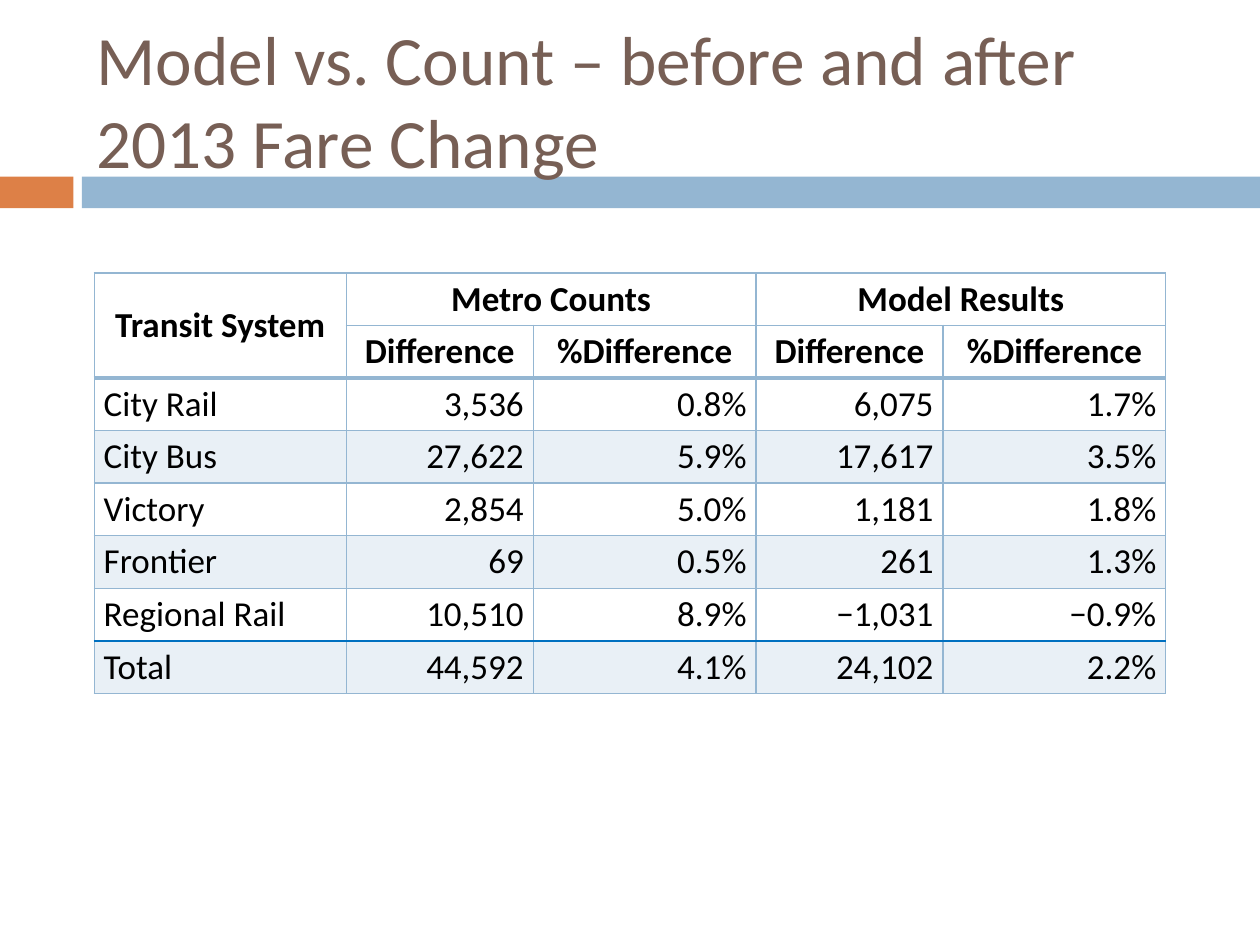
"""Build the slide that compares modelled and counted transit trips."""
from dataclasses import dataclass

import lxml.etree
import pptx
import pptx.dml.color
import pptx.enum.shapes
import pptx.enum.text
import pptx.oxml.ns
import pptx.util

Cm = pptx.util.Cm
Pt = pptx.util.Pt
ALIGN = pptx.enum.text.PP_ALIGN
MIDDLE = pptx.enum.text.MSO_ANCHOR.MIDDLE

HUES = {"orange": "DD8047", "blue": "94B6D2", "brown": "775F55",
        "black": "000000", "total": "0070C0"}
HEADS = 2
WIDTHS = (5.08, 3.77, 4.49, 3.77, 4.49)
HEIGHT = 1.06
ROWS = (
    ("Transit System", "Metro Counts", "", "Model Results", ""),
    ("", "Difference", "%Difference", "Difference", "%Difference"),
    ("City Rail", "3,536", "0.8%", "6,075", "1.7%"),
    ("City Bus", "27,622", "5.9%", "17,617", "3.5%"),
    ("Victory", "2,854", "5.0%", "1,181", "1.8%"),
    ("Frontier", "69", "0.5%", "261", "1.3%"),
    ("Regional Rail", "10,510", "8.9%", "−1,031", "−0.9%"),
    ("Total", "44,592", "4.1%", "24,102", "2.2%"),
)
MERGES = (((0, 0), (1, 0)), ((0, 1), (0, 2)), ((0, 3), (0, 4)))


@dataclass(frozen=True)
class Band:
    """A solid bar under the title, in centimetres."""
    left: float
    width: float
    hue: str


@dataclass(frozen=True)
class Rule:
    """A horizontal border of the table."""
    hue: str = "blue"
    width: float = 1


BANDS = (Band(0, 1.48, "orange"), Band(1.65, 23.75, "blue"))
RULES = {HEADS: Rule(width=2.25), len(ROWS) - 1: Rule("total")}


def shade(name: str) -> pptx.dml.color.RGBColor:
    """Return a named colour."""
    return pptx.dml.color.RGBColor.from_string(HUES[name])


def write(frame, text: str, *, size: float, hue: str = "black",
          bold: bool = False, align=ALIGN.LEFT) -> None:
    """Put formatted text into a text frame."""
    para = frame.paragraphs[0]
    para.alignment = align
    run = para.add_run()
    run.text = text
    run.font.name = "Calibri"
    run.font.size = Pt(size)
    run.font.bold = bold
    run.font.color.rgb = shade(hue)


def draw_band(slide, band: Band) -> None:
    """Draw one bar."""
    bar = slide.shapes.add_shape(
        pptx.enum.shapes.MSO_SHAPE.RECTANGLE,
        Cm(band.left), Cm(3.56), Cm(band.width), Cm(0.64))
    bar.shadow.inherit = False
    bar.fill.solid()
    bar.fill.fore_color.rgb = shade(band.hue)
    bar.line.fill.background()


def draw_title(slide, text: str) -> None:
    """Draw the slide title."""
    box = slide.shapes.add_textbox(Cm(1.7), Cm(0.64), Cm(22.66), Cm(2.74))
    box.text_frame.word_wrap = True
    box.text_frame.vertical_anchor = MIDDLE
    write(box.text_frame, text, size=39.6, hue="brown")


def add_node(root, tag: str, **attrs: str):
    """Append a drawing element to a parent."""
    return lxml.etree.SubElement(root, pptx.oxml.ns.qn(tag), attrs)


def edge(cell, side: str, rule: Rule) -> None:
    """Set one border of a cell."""
    line = add_node(cell._tc.get_or_add_tcPr(), f"a:ln{side}",
                    w=str(Pt(rule.width)))
    add_node(add_node(line, "a:solidFill"), "a:srgbClr", val=HUES[rule.hue])


def style(cell, row: int) -> None:
    """Set the borders, fill and margins of a cell."""
    plain = Rule()
    end = row + cell.span_height if cell.is_merge_origin else row + 1
    edge(cell, "L", plain)
    edge(cell, "R", plain)
    edge(cell, "T", RULES.get(row, plain))
    edge(cell, "B", RULES.get(end, plain))
    if row > HEADS and row % 2:
        cell.fill.solid()
        cell.fill.fore_color.rgb = shade("blue")
        tint = cell._tc.tcPr.find(pptx.oxml.ns.qn("a:solidFill"))[0]
        add_node(tint, "a:alpha", val="20000")
    else:
        cell.fill.background()
    cell.margin_left = cell.margin_right = Cm(0.19)
    cell.margin_top = cell.margin_bottom = 0
    cell.vertical_anchor = MIDDLE


def draw_table(slide) -> None:
    """Draw the table of counts and model results."""
    table = slide.shapes.add_table(
        len(ROWS), len(WIDTHS), Cm(1.9), Cm(5.5),
        Cm(sum(WIDTHS)), Cm(HEIGHT * len(ROWS))).table
    table.first_row = table.horz_banding = False
    for col, width in zip(table.columns, WIDTHS):
        col.width = Cm(width)
    for line in table.rows:
        line.height = Cm(HEIGHT)
    for start, stop in MERGES:
        table.cell(*start).merge(table.cell(*stop))
    for row, texts in enumerate(ROWS):
        for col, text in enumerate(texts):
            cell = table.cell(row, col)
            style(cell, row)
            if text:
                head = row < HEADS
                body = ALIGN.RIGHT if col else ALIGN.LEFT
                write(cell.text_frame, text, size=20, bold=head,
                      align=ALIGN.CENTER if head else body)


def main() -> None:
    """Build and save the deck."""
    deck = pptx.Presentation()
    deck.slide_width, deck.slide_height = Cm(25.4), Cm(19.05)
    slide = deck.slides.add_slide(deck.slide_layouts[6])
    for band in BANDS:
        draw_band(slide, band)
    draw_title(slide, "Model vs. Count – before and after 2013 Fare Change")
    draw_table(slide)
    deck.save("out.pptx")


if __name__ == "__main__":
    main()
